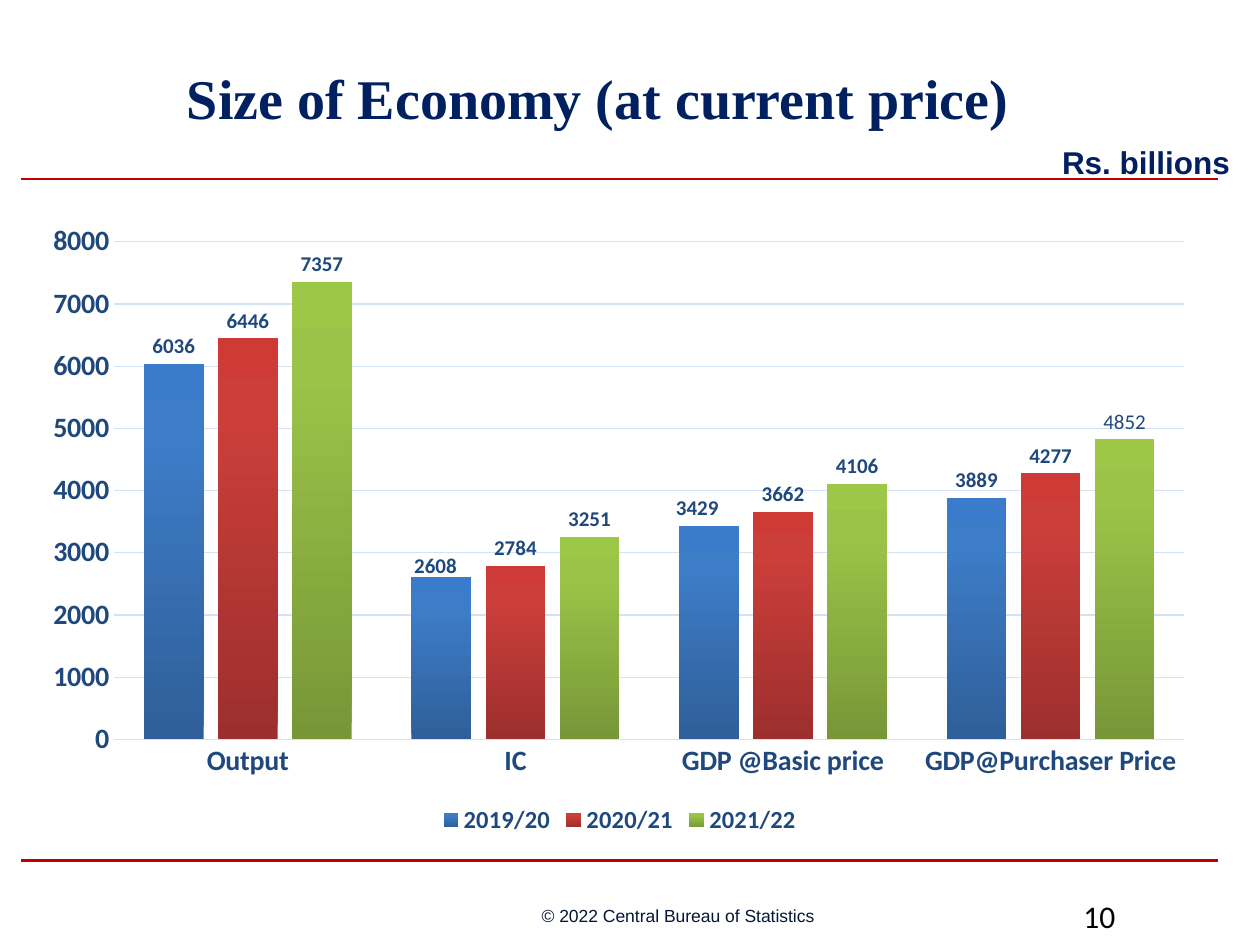
from lxml.etree import SubElement
from pptx import Presentation
from pptx.chart.data import CategoryChartData
from pptx.dml.color import RGBColor
from pptx.enum.chart import (
    XL_CHART_TYPE as ChartType,
    XL_LABEL_POSITION as LabelPosition,
    XL_LEGEND_POSITION as LegendPosition,
    XL_TICK_MARK as TickMark,
)
from pptx.enum.shapes import MSO_CONNECTOR as Connector
from pptx.enum.text import MSO_ANCHOR as Anchor, PP_ALIGN as Align
from pptx.oxml import parse_xml
from pptx.oxml.ns import nsdecls, qn
from pptx.util import Cm, Pt

COLORS = {
    "rule": "C00000",
    "navy": "002060",
    "footer": "031735",
    "label": "1F497D",
    "grid": "D4E3F4",
    "black": "000000",
}
CATEGORIES = ["Output", "IC", "GDP @Basic price", "GDP@Purchaser Price"]
SERIES = {
    "2019/20": ([6036, 2608, 3429, 3889], ["2F5F99", "3D7CC7", "3A7CCB"]),
    "2020/21": ([6446, 2784, 3662, 4277], ["9C2F2D", "CB3E3A", "CE3B37"]),
    "2021/22": ([7357, 3251, 4106, 4826], ["779737", "9BC348", "9DC746"]),
}
STOPS = [0, 80, 100]
LABEL_SHIFTS = {1: (-0.005, 0.01), 2: (-0.01, 0)}


def set_font(font, size, color, name="Calibri", bold=False):
    """Set the typeface, size, weight and colour of a font."""
    font.name, font.size, font.bold = name, Pt(size), bold
    font.color.rgb = RGBColor.from_string(COLORS[color])


def add_text(slide, box, text, size, color, name, bold=False,
             align=Align.LEFT, anchor=Anchor.TOP, inset=None):
    """Add one line of text in a box given in centimetres."""
    frame = slide.shapes.add_textbox(*map(Cm, box)).text_frame
    frame.word_wrap = True
    frame.vertical_anchor = anchor
    if inset is not None:
        frame.margin_left = frame.margin_right = Cm(inset)
        frame.margin_top = frame.margin_bottom = Cm(inset)
    paragraph = frame.paragraphs[0]
    paragraph.text = text
    paragraph.alignment = align
    set_font(paragraph.font, size, color, name, bold)


def add_rule(slide, left, top, width):
    """Add a horizontal red rule."""
    line = slide.shapes.add_connector(
        Connector.STRAIGHT, Cm(left), Cm(top), Cm(left + width), Cm(top))
    line.line.color.rgb = RGBColor.from_string(COLORS["rule"])
    line.line.width = Pt(1.5)
    SubElement(line._element.spPr, qn("a:effectLst"))


def add_header(slide, left, top, width):
    """Add the title, the unit note and the rule below them."""
    add_text(slide, (left + 0.2, top, 22.86, 2.62),
             "Size of Economy (at current price)", 32, "navy",
             "Times New Roman", True, Align.CENTER, Anchor.MIDDLE)
    add_text(slide, (left + 20.73, top + 2.11, 4.24, 1.02),
             "Rs. billions", 18, "navy", "Arial", True)
    add_rule(slide, left, top + 2.97, width)


def add_footer(slide, left, top, width):
    """Add the lower rule, the copyright line and the page number."""
    add_rule(slide, left, top, width)
    add_text(slide, (left + 10.49, top + 0.86, 5.59, 0.48),
             "© 2022 Central Bureau of Statistics", 10, "footer", "Arial",
             anchor=Anchor.MIDDLE, inset=0)
    add_text(slide, (left + 21.16, top + 0.61, 3.38, 0.58),
             "10", 18, "black", "Calibri")


def manual_layout(**values):
    """Build a manual chart layout from its named values."""
    parts = "".join(f'<c:{key} val="{value}"/>' for key, value in values.items())
    return parse_xml(f'<c:layout {nsdecls("c")}><c:manualLayout>{parts}'
                     "</c:manualLayout></c:layout>")


def fill_gradient(series, colors):
    """Fill the columns of a series with an upward three-stop gradient."""
    stops = "".join(
        f'<a:gs pos="{stop * 1000}"><a:srgbClr val="{color}"/></a:gs>'
        for stop, color in zip(STOPS, colors))
    series.format.fill.background()
    properties = series._element.spPr
    properties.replace(properties.find(qn("a:noFill")), parse_xml(
        f'<a:gradFill {nsdecls("a")} rotWithShape="1"><a:gsLst>{stops}</a:gsLst>'
        '<a:lin ang="16200000" scaled="0"/></a:gradFill>'))


def style_axis(axis):
    """Style the labels of an axis and hide its tick marks."""
    axis.major_tick_mark = axis.minor_tick_mark = TickMark.NONE
    set_font(axis.tick_labels.font, 16, "label", bold=True)


def style_grid(line):
    """Give a chart line the pale grid look."""
    line.color.rgb = RGBColor.from_string(COLORS["grid"])
    line.width = Pt(0.75)


def style_labels(series):
    """Show the values of a series above its columns."""
    labels = series.data_labels
    labels.show_value = True
    labels.number_format, labels.number_format_is_linked = "0", False
    labels.position = LabelPosition.OUTSIDE_END
    set_font(labels.font, 12, "label", bold=True)


def adjust_labels(first, last):
    """Shift two labels of the first series and reword one of the last."""
    for index, (x, y) in LABEL_SHIFTS.items():
        label = first.points[index].data_label
        set_font(label.font, 12, "label", bold=True)
        label.position = LabelPosition.OUTSIDE_END
        element = first._element.xpath(f".//c:dLbl[c:idx/@val={index}]")[0]
        element.insert(1, manual_layout(x=x, y=y))
    label = last.points[3].data_label
    label.text_frame.text = "4852"
    set_font(label.text_frame.paragraphs[0].runs[0].font, 12, "label")
    label.position = LabelPosition.OUTSIDE_END


def add_economy_chart(slide, left, top, width, height):
    """Add the clustered column chart of the economy by year."""
    data = CategoryChartData(number_format="0")
    data.categories = CATEGORIES
    for name, (values, _) in SERIES.items():
        data.add_series(name, values)
    chart = slide.shapes.add_chart(
        ChartType.COLUMN_CLUSTERED, *map(Cm, (left, top, width, height)), data).chart
    set_font(chart.font, 10, "black")
    chart.has_title = False
    chart.has_legend = True
    chart.legend.position = LegendPosition.BOTTOM
    chart.legend.include_in_layout = False
    set_font(chart.legend.font, 14, "label", bold=True)

    style_axis(chart.category_axis)
    style_grid(chart.category_axis.format.line)
    value_axis = chart.value_axis
    style_axis(value_axis)
    value_axis.minimum_scale, value_axis.maximum_scale = 0, 8000
    value_axis.major_unit = 1000
    value_axis.tick_labels.number_format = "0"
    value_axis.tick_labels.number_format_is_linked = False
    value_axis.format.line.fill.background()
    style_grid(value_axis.major_gridlines.format.line)

    plot = chart.plots[0]
    plot.gap_width, plot.overlap, plot.vary_by_categories = 100, -24, False
    for series in plot.series:
        fill_gradient(series, SERIES[series.name][1])
        style_labels(series)
    adjust_labels(plot.series[0], plot.series[-1])

    area = chart._chartSpace.chart.plotArea
    for layout in area.findall(qn("c:layout")):
        area.remove(layout)
    area.insert(0, manual_layout(layoutTarget="inner", xMode="edge", yMode="edge",
                                 x=0.07, y=0.05, w=0.91, h=0.79))


def main():
    """Build and save the slide."""
    presentation = Presentation()
    presentation.slide_width, presentation.slide_height = Cm(25.4), Cm(19.05)
    slide = presentation.slides.add_slide(presentation.slide_layouts[6])
    add_header(slide, 0.43, 0.64, 24.13)
    add_economy_chart(slide, 0.64, 4.24, 23.71, 12.7)
    add_footer(slide, 0.43, 17.35, 24.13)
    presentation.save("out.pptx")


if __name__ == "__main__":
    main()
